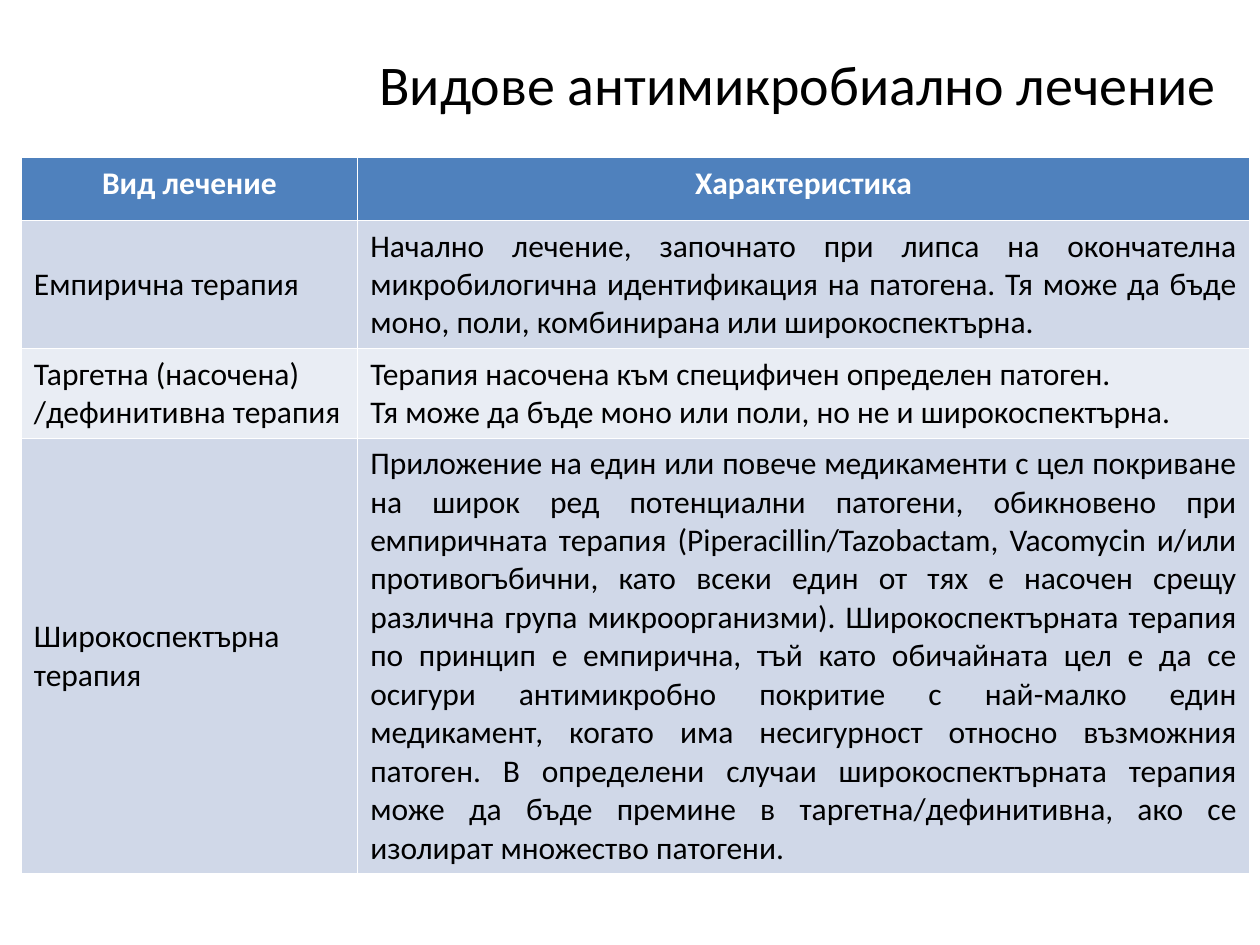
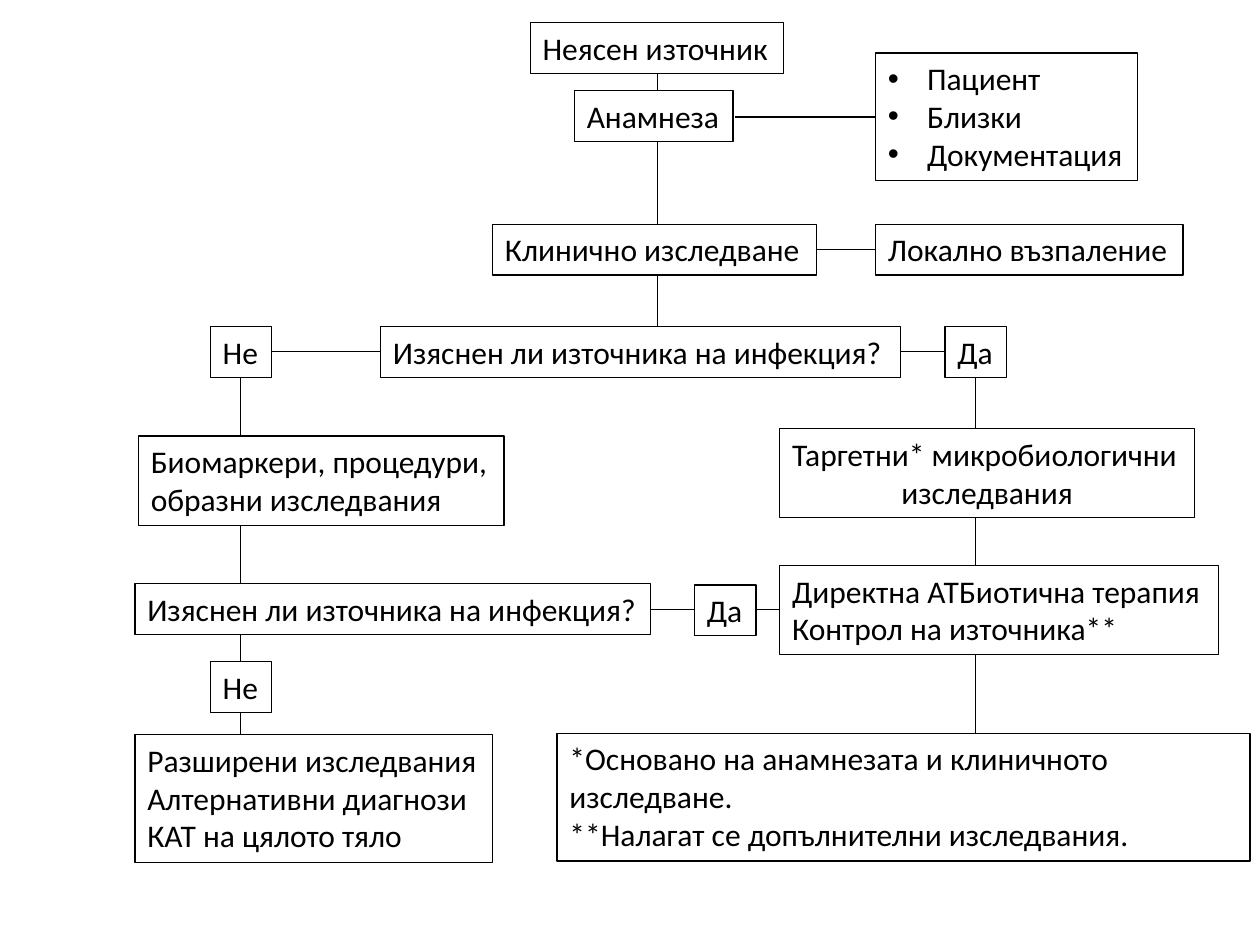
from dataclasses import dataclass
from typing import NamedTuple

from lxml import etree
from pptx import Presentation
from pptx.dml.color import RGBColor
from pptx.enum import shapes as es, text as et
from pptx.oxml import ns
from pptx.util import Cm, Pt


@dataclass(frozen=True)
class Theme:
    font: str = "Calibri"
    ink: RGBColor = RGBColor(0, 0, 0)
    paper: RGBColor = RGBColor(255, 255, 255)
    head: RGBColor = RGBColor(0x4F, 0x81, 0xBD)
    bands: tuple = (RGBColor(0xD0, 0xD8, 0xE8), RGBColor(0xE9, 0xED, 0xF4))
    title: Pt = Pt(32)
    body: Pt = Pt(18)
    line: Pt = Pt(0.75)


class Box(NamedTuple):
    left: float
    top: float
    width: float
    text: str
    rows: int = 1
    bullet: bool = False
    last: et.PP_ALIGN = et.PP_ALIGN.LEFT


class Link(NamedTuple):
    x1: float
    y1: float
    x2: float
    y2: float


THEME = Theme()
ASK = "Изяснен ли източника на инфекция?"

THERAPY = [
    ("Вид лечение", "Характеристика"),
    ("Емпирична терапия",
     "Начално лечение, започнато при липса на окончателна микробилогична "
     "идентификация на патогена. Тя може да бъде моно, поли, комбинирана "
     "или широкоспектърна."),
    ("Таргетна (насочена) /дефинитивна терапия",
     "Терапия насочена към специфичен определен патоген.\n"
     "Тя може да бъде моно или поли, но не и широкоспектърна."),
    ("Широкоспектърна терапия",
     "Приложение на един или повече медикаменти с цел покриване на широк ред "
     "потенциални патогени, обикновено при емпиричната терапия "
     "(Piperacillin/Tazobactam, Vacomycin и/или противогъбични, като всеки "
     "един от тях е насочен срещу различна група микроорганизми). "
     "Широкоспектърната терапия по принцип е емпирична, тъй като обичайната "
     "цел е да се осигури антимикробно покритие с най-малко един медикамент, "
     "когато има несигурност относно възможния патоген. В определени случаи "
     "широкоспектърната терапия може да бъде премине в "
     "таргетна/дефинитивна, ако се изолират множество патогени."),
]
WIDTHS = (6.78, 17.98)
HEIGHTS = (1.27, 2.51, 1.75, 8.53)

LINKS = [
    Link(19.66, 7.21, 19.66, 15.09),
    Link(12.88, 12.29, 16.94, 12.29),
    Link(16.46, 7.09, 19.3, 7.09),
    Link(15.88, 5.03, 18.72, 5.03),
    Link(13.26, 1.47, 13.26, 7.09),
    Link(14.81, 2.36, 17.65, 2.36),
    Link(4.85, 7.09, 4.85, 15.88),
    Link(7.67, 7.09, 5.46, 7.09),
]
BOXES = [
    Box(10.69, 0.46, 5.11, "Неясен източник"),
    Box(11.58, 1.83, 3.2, "Анамнеза"),
    Box(17.65, 1.07, 5.28, "Пациент\nБлизки\nДокументация", 3, bullet=True),
    Box(9.93, 4.52, 6.53, "Клинично изследване"),
    Box(17.65, 4.52, 6.2, "Локално възпаление"),
    Box(4.24, 6.58, 1.24, "Не"),
    Box(7.67, 6.58, 10.49, ASK),
    Box(19.05, 6.58, 1.24, "Да"),
    Box(2.79, 8.79, 7.37, "Биомаркери, процедури,\nобразни изследвания", 2),
    Box(15.72, 8.64, 8.36, "Таргетни* микробиологични\nизследвания", 2,
        last=et.PP_ALIGN.CENTER),
    Box(2.72, 11.76, 10.39, ASK),
    Box(14, 11.79, 1.24, "Да"),
    Box(15.72, 11.4, 8.84,
        "Директна АТБиотична терапия\nКонтрол на източника**", 2),
    Box(4.24, 13.34, 1.24, "Не"),
    Box(2.72, 14.81, 7.21,
        "Разширени изследвания\nАлтернативни диагнози\nКАТ на цялото тяло", 3),
    Box(11.23, 14.78, 13.97,
        "*Основано на анамнезата и клиничното изследване.\n"
        "**Налагат се допълнителни изследвания.", 3),
]


def style(para, size: Pt = THEME.body, color: RGBColor = THEME.ink,
          bold: bool = False, align=et.PP_ALIGN.LEFT) -> None:
    para.alignment = align
    font = para.font
    font.name, font.size, font.bold = THEME.font, size, bold
    font.color.rgb = color


def add_bullet(para) -> None:
    props = para._p.get_or_add_pPr()
    props.set("marL", str(Cm(0.79)))
    props.set("indent", str(-Cm(0.79)))
    etree.SubElement(props, ns.qn("a:buFont")).set("typeface", "Arial")
    etree.SubElement(props, ns.qn("a:buChar")).set("char", "•")


def draw_link(slide, link: Link) -> None:
    line = slide.shapes.add_connector(
        es.MSO_CONNECTOR.STRAIGHT, *(Cm(v) for v in link))
    line.line.color.rgb = THEME.ink
    line.line.width = THEME.line
    etree.SubElement(line._element.spPr, ns.qn("a:effectLst"))


def draw_box(slide, box: Box) -> None:
    height = 0.25 + 0.775 * box.rows
    shape = slide.shapes.add_textbox(
        Cm(box.left), Cm(box.top), Cm(box.width), Cm(height))
    shape.fill.solid()
    shape.fill.fore_color.rgb = THEME.paper
    shape.line.color.rgb = THEME.ink
    shape.line.width = THEME.line
    frame = shape.text_frame
    frame.word_wrap = True
    frame.auto_size = et.MSO_AUTO_SIZE.SHAPE_TO_FIT_TEXT
    frame.text = box.text
    for para in frame.paragraphs:
        if box.bullet:
            add_bullet(para)
        style(para)
    frame.paragraphs[-1].alignment = box.last


def draw_table(slide) -> None:
    table = slide.shapes.add_table(
        len(THERAPY), len(WIDTHS), Cm(0.43), Cm(3.18),
        Cm(sum(WIDTHS)), Cm(sum(HEIGHTS))).table
    for col, width in zip(table.columns, WIDTHS):
        col.width = Cm(width)
    for r, (row, height) in enumerate(zip(THERAPY, HEIGHTS)):
        table.rows[r].height = Cm(height)
        head = r == 0
        for c, words in enumerate(row):
            cell = table.cell(r, c)
            cell.text = words
            cell.fill.solid()
            cell.fill.fore_color.rgb = (
                THEME.head if head else THEME.bands[(r - 1) % 2])
            if head:
                align = et.PP_ALIGN.CENTER
            elif c == 0:
                align = et.PP_ALIGN.LEFT
                cell.vertical_anchor = et.MSO_ANCHOR.MIDDLE
            else:
                align = et.PP_ALIGN.JUSTIFY
            for para in cell.text_frame.paragraphs:
                style(para, color=THEME.paper if head else THEME.ink,
                      bold=head, align=align)


def draw_title(slide, words: str) -> None:
    title = slide.shapes.title
    title.left, title.top = Cm(6.78), Cm(0.08)
    title.width, title.height = Cm(18.62), Cm(3.18)
    title.text_frame.text = words
    title.text_frame.vertical_anchor = et.MSO_ANCHOR.MIDDLE
    style(title.text_frame.paragraphs[0], THEME.title,
          align=et.PP_ALIGN.CENTER)


def main() -> None:
    deck = Presentation()
    deck.slide_width, deck.slide_height = Cm(25.4), Cm(19.05)

    types = deck.slides.add_slide(deck.slide_layouts[5])
    draw_title(types, "Видове антимикробиално лечение")
    draw_table(types)

    flow = deck.slides.add_slide(deck.slide_layouts[6])
    for link in LINKS:
        draw_link(flow, link)
    for box in BOXES:
        draw_box(flow, box)

    deck.save("out.pptx")


if __name__ == "__main__":
    main()
